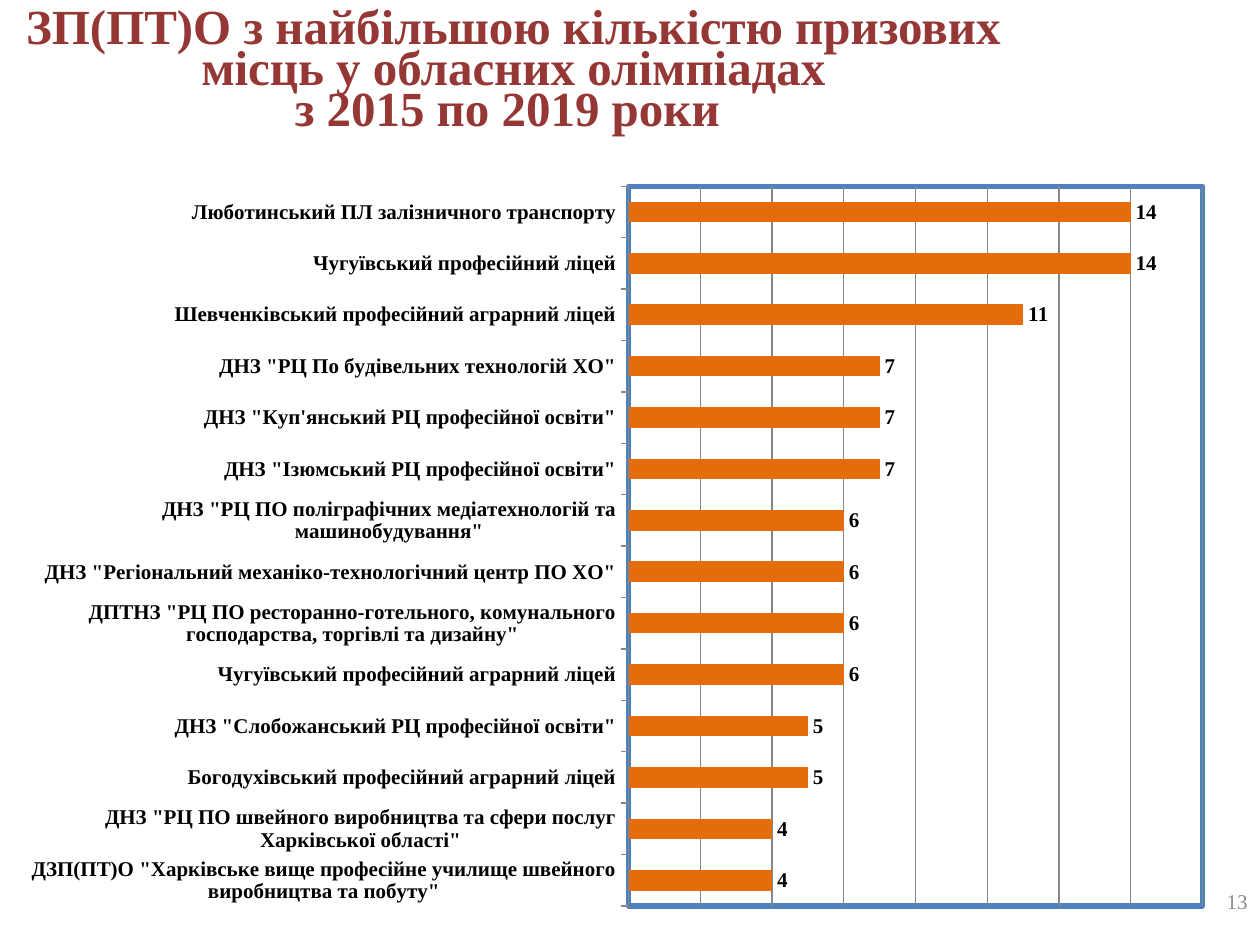
import pptx
import pptx.chart.data
import pptx.dml.color
import pptx.enum.chart
import pptx.enum.text
import pptx.util
from lxml import etree

Cm = pptx.util.Cm
Pt = pptx.util.Pt
RGB = pptx.dml.color.RGBColor
Align = pptx.enum.text.PP_ALIGN

FONT = "Times New Roman"
RED = RGB(0x95, 0x37, 0x35)
GRAY = RGB(0x8C, 0x8C, 0x8C)
GRID = RGB(0x86, 0x86, 0x86)
BLUE = RGB(0x4F, 0x81, 0xBD)
ORANGE = RGB(0xE4, 0x6C, 0x0A)
BLACK = RGB(0, 0, 0)

TITLE = ("ЗП(ПТ)О з найбільшою кількістю призових місць у обласних олімпіадах\v"
         "з 2015 по 2019 роки ")

WINS = [
    ("Люботинський ПЛ залізничного транспорту", 14),
    ("Чугуївський професійний ліцей", 14),
    ("Шевченківський професійний аграрний ліцей", 11),
    ('ДНЗ "РЦ По будівельних технологій ХО"', 7),
    ('ДНЗ "Куп\'янський РЦ професійної освіти"', 7),
    ('ДНЗ "Ізюмський РЦ професійної освіти"', 7),
    ('ДНЗ "РЦ ПО поліграфічних медіатехнологій та машинобудування"', 6),
    ('ДНЗ "Регіональний механіко-технологічний центр ПО ХО"', 6),
    ('ДПТНЗ "РЦ ПО ресторанно-готельного, комунального господарства, '
     'торгівлі та дизайну"', 6),
    ("Чугуївський професійний аграрний ліцей", 6),
    ('ДНЗ "Слобожанський РЦ професійної освіти"', 5),
    ("Богодухівський професійний аграрний ліцей", 5),
    ('ДНЗ "РЦ ПО швейного виробництва та сфери послуг Харківської області"', 4),
    ('ДЗП(ПТ)О "Харківське вище професійне училище швейного виробництва '
     'та побуту"', 4),
]


def style(font, size, color, bold):
    font.name = FONT
    font.size = Pt(size)
    font.bold = bold
    font.color.rgb = color


def add_text(slide, box, text, size, color, align, bold=False, space=1.0):
    frame = slide.shapes.add_textbox(*box).text_frame
    frame.word_wrap = True
    frame.vertical_anchor = pptx.enum.text.MSO_ANCHOR.MIDDLE
    frame.text = text
    para = frame.paragraphs[0]
    para.alignment = align
    para.line_spacing = space
    for run in para.runs:
        style(run.font, size, color, bold)


def frame_plot(chart, x, y, w, h):
    """Fix the inner plot area, in fractions of the chart, and outline it."""
    ns = {"c": "http://schemas.openxmlformats.org/drawingml/2006/chart",
          "a": "http://schemas.openxmlformats.org/drawingml/2006/main"}
    space = " ".join(f'xmlns:{key}="{uri}"' for key, uri in ns.items())
    plot = chart.element.find(".//c:plotArea", ns)
    for old in plot.findall("c:layout", ns):
        plot.remove(old)
    plot.insert(0, etree.fromstring(
        f'<c:layout {space}><c:manualLayout><c:layoutTarget val="inner"/>'
        f'<c:xMode val="edge"/><c:yMode val="edge"/><c:x val="{x}"/>'
        f'<c:y val="{y}"/><c:w val="{w}"/><c:h val="{h}"/>'
        f'</c:manualLayout></c:layout>'))
    plot.append(etree.fromstring(
        f'<c:spPr {space}><a:noFill/><a:ln w="{Pt(3)}"><a:solidFill>'
        f'<a:srgbClr val="{BLUE}"/></a:solidFill></a:ln></c:spPr>'))


def add_bars(slide, box):
    data = pptx.chart.data.CategoryChartData()
    data.categories = [name for name, _ in WINS]
    data.add_series("Series 1", [wins for _, wins in WINS])
    kind = pptx.enum.chart.XL_CHART_TYPE.BAR_CLUSTERED
    chart = slide.shapes.add_chart(kind, *box, data).chart
    chart.has_legend = False
    chart.has_title = False
    style(chart.font, 12, BLACK, True)

    names = chart.category_axis
    names.reverse_order = True
    names.major_tick_mark = pptx.enum.chart.XL_TICK_MARK.OUTSIDE
    names.format.line.color.rgb = GRID

    scale = chart.value_axis
    scale.visible = False
    scale.minimum_scale, scale.maximum_scale, scale.major_unit = 0, 16, 2
    scale.has_major_gridlines = True
    scale.major_gridlines.format.line.color.rgb = GRID

    bars = chart.plots[0]
    bars.gap_width = 150
    bars.vary_by_categories = False
    fill = bars.series[0].format.fill
    fill.solid()
    fill.fore_color.rgb = ORANGE
    bars.has_data_labels = True
    labels = bars.data_labels
    labels.show_value = True
    labels.position = pptx.enum.chart.XL_LABEL_POSITION.OUTSIDE_END
    style(labels.font, 12, BLACK, True)
    frame_plot(chart, 0.515, 0.024, 0.47, 0.926)


def main():
    deck = pptx.Presentation()
    deck.slide_width, deck.slide_height = Cm(25.4), Cm(19.05)
    slide = deck.slides.add_slide(deck.slide_layouts[6])
    add_text(slide, (Cm(0), Cm(0.33), Cm(20.7), Cm(2.29)), TITLE,
             28, RED, Align.CENTER, bold=True, space=0.7)
    add_text(slide, (Cm(19.48), Cm(17.65), Cm(5.92), Cm(1.02)), "13",
             12, GRAY, Align.RIGHT)
    add_bars(slide, (Cm(0), Cm(3.38), Cm(24.61), Cm(15.67)))
    deck.save("out.pptx")


if __name__ == "__main__":
    main()
